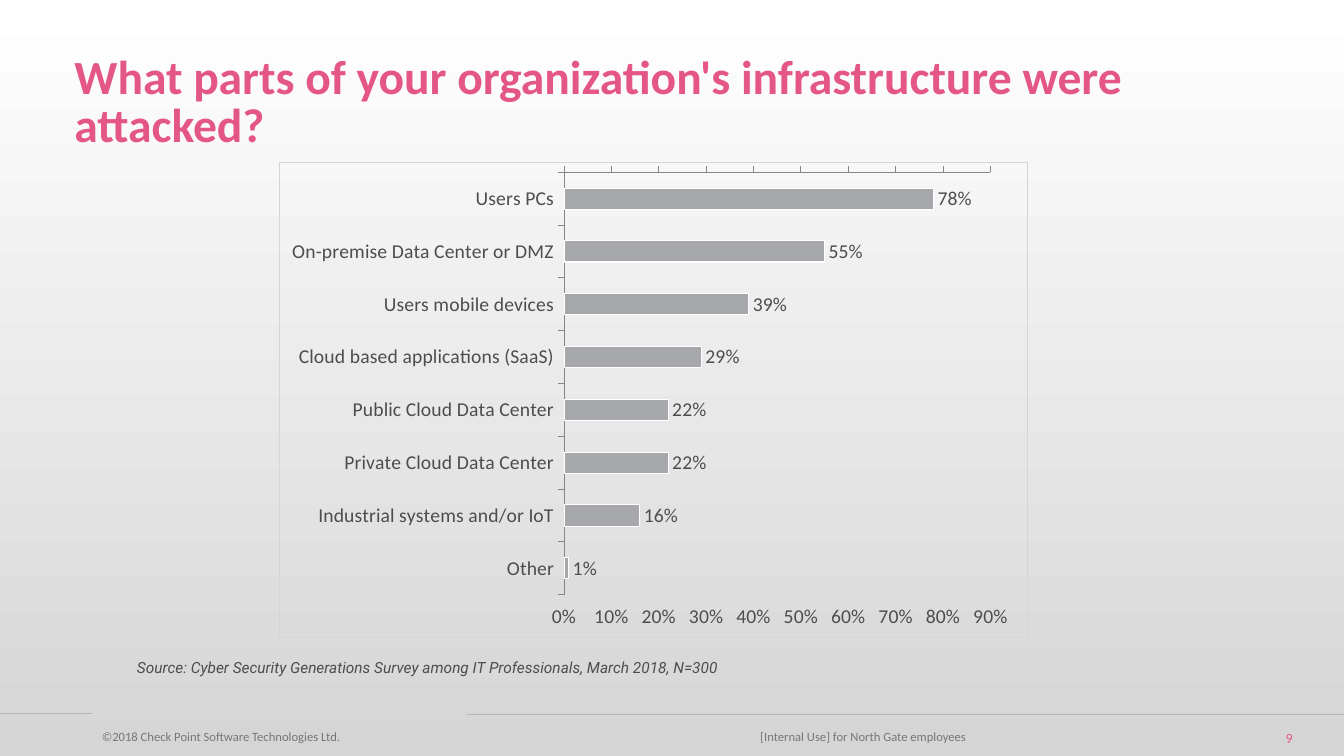
import pptx
import pptx.chart.data
import pptx.dml.color
import pptx.enum.chart
import pptx.enum.shapes
import pptx.enum.text
import pptx.oxml
import pptx.util
from lxml import etree

COLORS = {"pink": "E45785", "text": "4D4D4F", "muted": "777777", "rule": "B7B7B9",
          "bar": "A7A8AC", "axis": "868686", "border": "D5D5D5", "white": "FFFFFF"}
ALIGN = pptx.enum.text.PP_ALIGN
ANCHOR = pptx.enum.text.MSO_ANCHOR

ATTACKS = {
    "Users PCs": 0.78,
    "On-premise Data Center or DMZ": 0.55,
    "Users mobile devices": 0.39,
    "Cloud based applications (SaaS)": 0.29,
    "Public Cloud Data Center": 0.22,
    "Private Cloud Data Center": 0.22,
    "Industrial systems and/or IoT": 0.16,
    "Other": 0.01,
}


def color(name):
    return pptx.dml.color.RGBColor.from_string(COLORS[name])


def write(paragraph, text, *, size, tint="text", font="Calibri", bold=False,
          italic=False, align=ALIGN.LEFT, spacing=None):
    paragraph.alignment = align
    if spacing:
        paragraph.line_spacing = spacing
    span = paragraph.add_run()
    span.text = text
    span.font.name = font
    span.font.size = pptx.util.Pt(size)
    span.font.bold = bold
    span.font.italic = italic
    span.font.color.rgb = color(tint)


class Page:
    """Places elements on one slide; lengths are percentages of the slide's size."""

    def __init__(self, deck):
        self.deck = deck
        self.slide = deck.slides.add_slide(deck.slide_layouts[6])
        self.shapes = self.slide.shapes

    def x(self, share):
        return round(self.deck.slide_width * share / 100)

    def y(self, share):
        return round(self.deck.slide_height * share / 100)

    def area(self, left, top, width, height):
        return self.x(left), self.y(top), self.x(width), self.y(height)

    def backdrop(self, top, bottom):
        box = self.shapes.add_shape(pptx.enum.shapes.MSO_SHAPE.RECTANGLE,
                                    *self.area(0, 0, 100, 100))
        box.shadow.inherit = False
        box.line.fill.background()
        box.fill.gradient()
        box.fill.gradient_angle = 270
        for stop, name in zip(box.fill.gradient_stops, (top, bottom)):
            stop.color.rgb = color(name)

    def rule(self, start, end, height):
        line = self.shapes.add_connector(
            pptx.enum.shapes.MSO_CONNECTOR.STRAIGHT,
            self.x(start), self.y(height), self.x(end), self.y(height))
        line.line.color.rgb = color("rule")
        line.line.width = pptx.util.Pt(0.75)
        etree.SubElement(line.element.spPr, pptx.oxml.ns.qn("a:effectLst"))

    def text(self, area, text, anchor=ANCHOR.TOP, **style):
        box = self.shapes.add_textbox(*self.area(*area))
        box.text_frame.word_wrap = True
        box.text_frame.vertical_anchor = anchor
        write(box.text_frame.paragraphs[0], text, **style)
        return box

    def footer(self, area, text, **style):
        box = self.text(area, text, ANCHOR.MIDDLE, **style)
        box.text_frame.margin_left = box.text_frame.margin_right = pptx.util.Inches(0.13)
        box.text_frame.margin_top = box.text_frame.margin_bottom = pptx.util.Inches(0.07)

    def bar_chart(self, area, values, plot_area):
        kinds = pptx.enum.chart
        data = pptx.chart.data.CategoryChartData(number_format="0%")
        data.categories = list(values)
        data.add_series("Series 1", list(values.values()))
        chart = self.shapes.add_chart(kinds.XL_CHART_TYPE.BAR_CLUSTERED,
                                      *self.area(*area), data).chart
        chart.has_legend = chart.has_title = False
        chart.font.name = "Calibri"
        chart.font.size = pptx.util.Pt(14)
        chart.font.color.rgb = color("text")

        # Bars and their labels
        plot = chart.plots[0]
        plot.gap_width = 150
        plot.vary_by_categories = False
        bars = plot.series[0].format
        bars.fill.solid()
        bars.fill.fore_color.rgb = color("bar")
        bars.line.color.rgb = color("white")
        bars.line.width = pptx.util.Pt(0.75)
        plot.has_data_labels = True
        labels = plot.data_labels
        labels.show_value = True
        labels.position = kinds.XL_LABEL_POSITION.OUTSIDE_END
        labels.number_format = "0%"
        labels.number_format_is_linked = False

        # Axes: first category on top, percentages below
        for axis in (chart.category_axis, chart.value_axis):
            axis.has_major_gridlines = False
            axis.major_tick_mark = kinds.XL_TICK_MARK.OUTSIDE
            axis.format.line.color.rgb = color("axis")
            axis.format.line.width = pptx.util.Pt(0.75)
        chart.category_axis.reverse_order = True
        scale = chart.value_axis
        scale.minimum_scale, scale.maximum_scale, scale.major_unit = 0, 0.9, 0.1
        scale.tick_label_position = kinds.XL_TICK_LABEL_POSITION.HIGH
        scale.tick_labels.number_format = "0%"
        scale.tick_labels.number_format_is_linked = False

        self.arrange_chart(chart, plot_area)

    def arrange_chart(self, chart, plot_area):
        """Fix the plot area inside the chart and draw the chart's border."""
        plot = chart.element.chart.plotArea
        for old in plot.findall(pptx.oxml.ns.qn("c:layout")):
            plot.remove(old)
        sizes = "".join(f'<c:{key} val="{share}"/>' for key, share in zip("xywh", plot_area))
        plot.insert(0, pptx.oxml.parse_xml(
            f'<c:layout {pptx.oxml.ns.nsdecls("c")}><c:manualLayout>'
            '<c:layoutTarget val="inner"/><c:xMode val="edge"/><c:yMode val="edge"/>'
            f'{sizes}</c:manualLayout></c:layout>'))
        chart.element.chart.addnext(pptx.oxml.parse_xml(
            f'<c:spPr {pptx.oxml.ns.nsdecls("c", "a")}><a:noFill/><a:ln w="9525"><a:solidFill>'
            f'<a:srgbClr val="{COLORS["border"]}"/></a:solidFill></a:ln></c:spPr>'))


def main():
    deck = pptx.Presentation()
    deck.slide_width = pptx.util.Inches(13.33)
    deck.slide_height = pptx.util.Inches(7.5)
    page = Page(deck)

    # Background and footer
    page.backdrop("white", "border")
    page.rule(0, 6.83, 94.4)
    page.rule(34.73, 100, 94.53)
    page.footer((82.07, 95.6, 15.08, 4), "9", size=10, tint="pink", align=ALIGN.RIGHT)
    page.footer((6.6, 95.2, 22.51, 4.4), "©2018 Check Point Software Technologies Ltd.",
                size=9, tint="muted")
    page.footer((48.61, 95.2, 31.21, 4.4), "[Internal Use] for North Gate employees",
                size=9, tint="muted", align=ALIGN.CENTER)

    # Title, chart and source
    page.text((4.8, 6.67, 80.87, 13.47),
              "What parts of your organization's infrastructure were attacked?",
              size=34, tint="pink", bold=True, spacing=0.85)
    page.bar_chart((20.78, 21.47, 55.74, 62.93), ATTACKS, (0.38, 0.02, 0.57, 0.89))
    page.text((9.45, 86.4, 62.12, 3.87),
              "Source: Cyber Security Generations Survey among IT Professionals, "
              "March 2018, N=300", size=11, font="Roboto", italic=True)

    deck.save("out.pptx")


if __name__ == "__main__":
    main()
